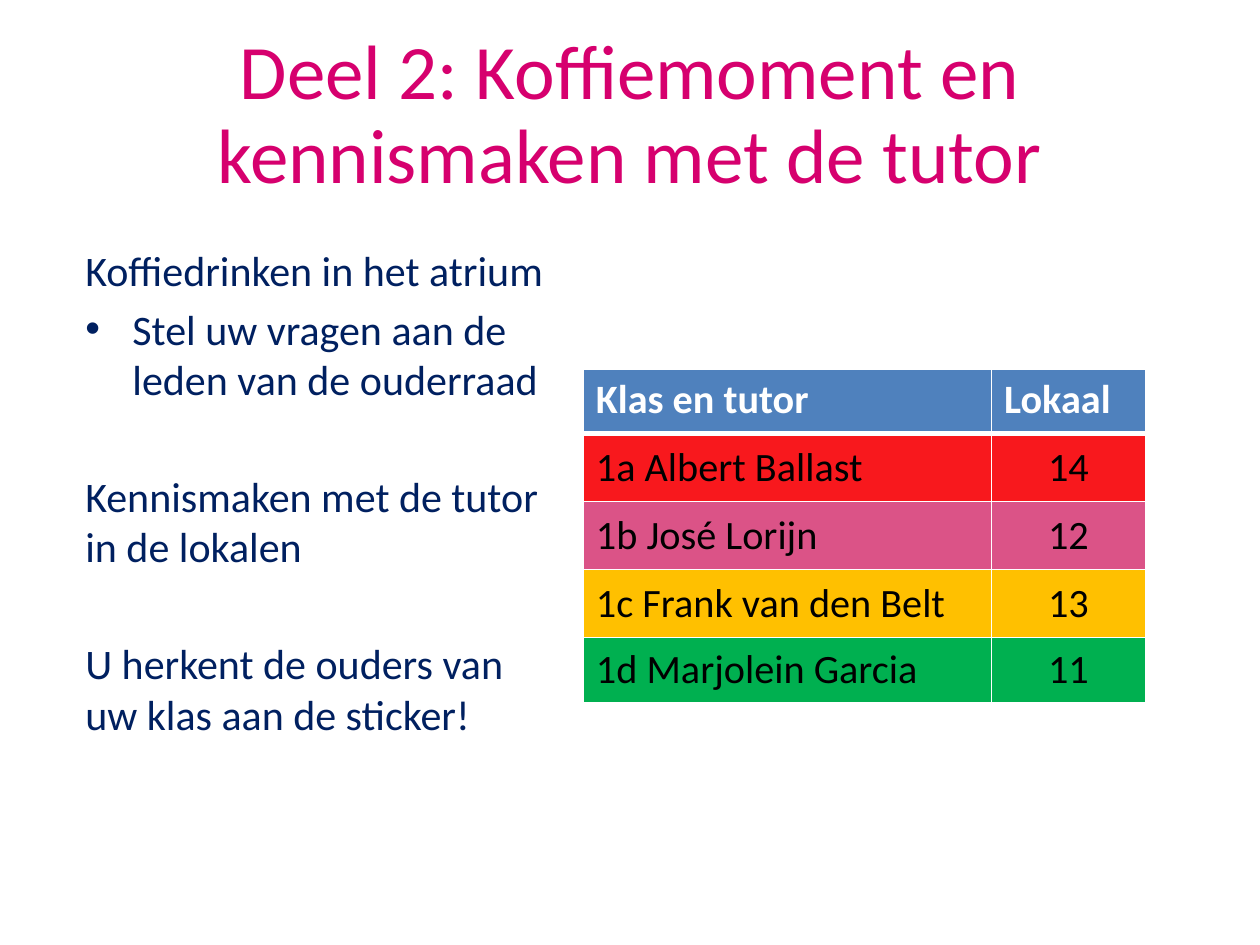
from typing import NamedTuple

from lxml import etree
from pptx import Presentation
from pptx.dml.color import RGBColor
from pptx.enum.text import MSO_ANCHOR, PP_ALIGN
from pptx.oxml.ns import qn
from pptx.util import Cm, Pt

CENTER, LEFT = PP_ALIGN.CENTER, PP_ALIGN.LEFT
TOP, MIDDLE = MSO_ANCHOR.TOP, MSO_ANCHOR.MIDDLE

FONT = "Calibri"
MAGENTA = RGBColor(0xD6, 0x00, 0x6E)
NAVY = RGBColor(0x00, 0x20, 0x60)
BLUE = RGBColor(0x4F, 0x81, 0xBD)
RED = RGBColor(0xF8, 0x18, 0x1D)
PINK = RGBColor(0xDB, 0x53, 0x87)
AMBER = RGBColor(0xFF, 0xC0, 0x00)
GREEN = RGBColor(0x00, 0xB0, 0x50)
WHITE = RGBColor(0xFF, 0xFF, 0xFF)
BLACK = RGBColor(0x00, 0x00, 0x00)


class BodyLine(NamedTuple):
    text: str
    space_before: float
    bullet: bool = False


class ClassRow(NamedTuple):
    tutor: str
    room: str
    fill: RGBColor
    height: float


BODY = [
    BodyLine("Koffiedrinken in het atrium", 0),
    BodyLine("Stel uw vragen aan de leden van de ouderraad", 4.8, bullet=True),
    BodyLine("Kennismaken met de tutor in de lokalen", 38),
    BodyLine("U herkent de ouders van uw klas aan de sticker!", 38),
]
ROWS = [
    ClassRow("Klas en tutor", "Lokaal", BLUE, 1.3),
    ClassRow("1a Albert Ballast", "14", RED, 1.37),
    ClassRow("1b José Lorijn", "12", PINK, 1.37),
    ClassRow("1c Frank van den Belt", "13", AMBER, 1.37),
    ClassRow("1d Marjolein Garcia", "11", GREEN, 1.32),
]
COLUMN_WIDTHS = [8.23, 3.1]


def format_runs(p, size: float, color: RGBColor, bold: bool = False) -> None:
    for r in p.runs:
        r.font.name = FONT
        r.font.size = Pt(size)
        r.font.bold = bold
        r.font.color.rgb = color


def add_box(s, left: float, top: float, width: float, height: float):
    tf = s.shapes.add_textbox(Cm(left), Cm(top), Cm(width), Cm(height)).text_frame
    tf.word_wrap = True
    return tf


def add_title(s, text: str) -> None:
    tf = add_box(s, 1.27, 0.76, 22.86, 3.18)
    tf.vertical_anchor = MIDDLE
    tf.text = text
    p = tf.paragraphs[0]
    p.alignment = CENTER
    p.line_spacing = 0.9
    format_runs(p, 44, MAGENTA)


def add_bullet(p) -> None:
    pPr = p._p.get_or_add_pPr()
    pPr.set("marL", str(Cm(0.95)))
    pPr.set("indent", str(-Cm(0.95)))
    etree.SubElement(pPr, qn("a:buFont"), typeface="Arial")
    etree.SubElement(pPr, qn("a:buChar"), char="•")


def add_body(s, lines: list[BodyLine]) -> None:
    tf = add_box(s, 1.47, 4.8, 10.01, 10.97)
    tf.text = "\n".join(line.text for line in lines)
    for p, line in zip(tf.paragraphs, lines):
        if line.bullet:
            add_bullet(p)
        p.space_before = Pt(line.space_before)
        format_runs(p, 24, NAVY)


def set_borders(cell, top: float, bottom: float) -> None:
    tcPr = cell._tc.get_or_add_tcPr()
    for tag, width in (("lnL", 1), ("lnR", 1), ("lnT", top), ("lnB", bottom)):
        ln = etree.SubElement(tcPr, qn(f"a:{tag}"), w=str(Pt(width)))
        fill = etree.SubElement(ln, qn("a:solidFill"))
        etree.SubElement(fill, qn("a:srgbClr"), val=str(WHITE))


def add_class_table(s, rows: list[ClassRow]) -> None:
    table = s.shapes.add_table(
        len(rows), len(COLUMN_WIDTHS), Cm(11.76), Cm(7.44),
        Cm(sum(COLUMN_WIDTHS)), Cm(sum(row.height for row in rows)),
    ).table
    for column, width in zip(table.columns, COLUMN_WIDTHS):
        column.width = Cm(width)
    for i, row in enumerate(rows):
        header = i == 0
        table.rows[i].height = Cm(row.height)
        for j, text in enumerate((row.tutor, row.room)):
            cell = table.cell(i, j)
            set_borders(cell, 3 if i == 1 else 1, 3 if header else 1)
            cell.fill.solid()
            cell.fill.fore_color.rgb = row.fill
            cell.vertical_anchor = TOP if header else MIDDLE
            cell.text_frame.text = text
            p = cell.text_frame.paragraphs[0]
            p.alignment = CENTER if j == 1 and not header else LEFT
            format_runs(p, 23, WHITE if header else BLACK, bold=header)


def main() -> None:
    prs = Presentation()
    prs.slide_width, prs.slide_height = Cm(25.4), Cm(19.05)
    s = prs.slides.add_slide(prs.slide_layouts[6])
    add_title(s, "Deel 2: Koffiemoment en kennismaken met de tutor")
    add_body(s, BODY)
    add_class_table(s, ROWS)
    prs.save("out.pptx")


if __name__ == "__main__":
    main()
